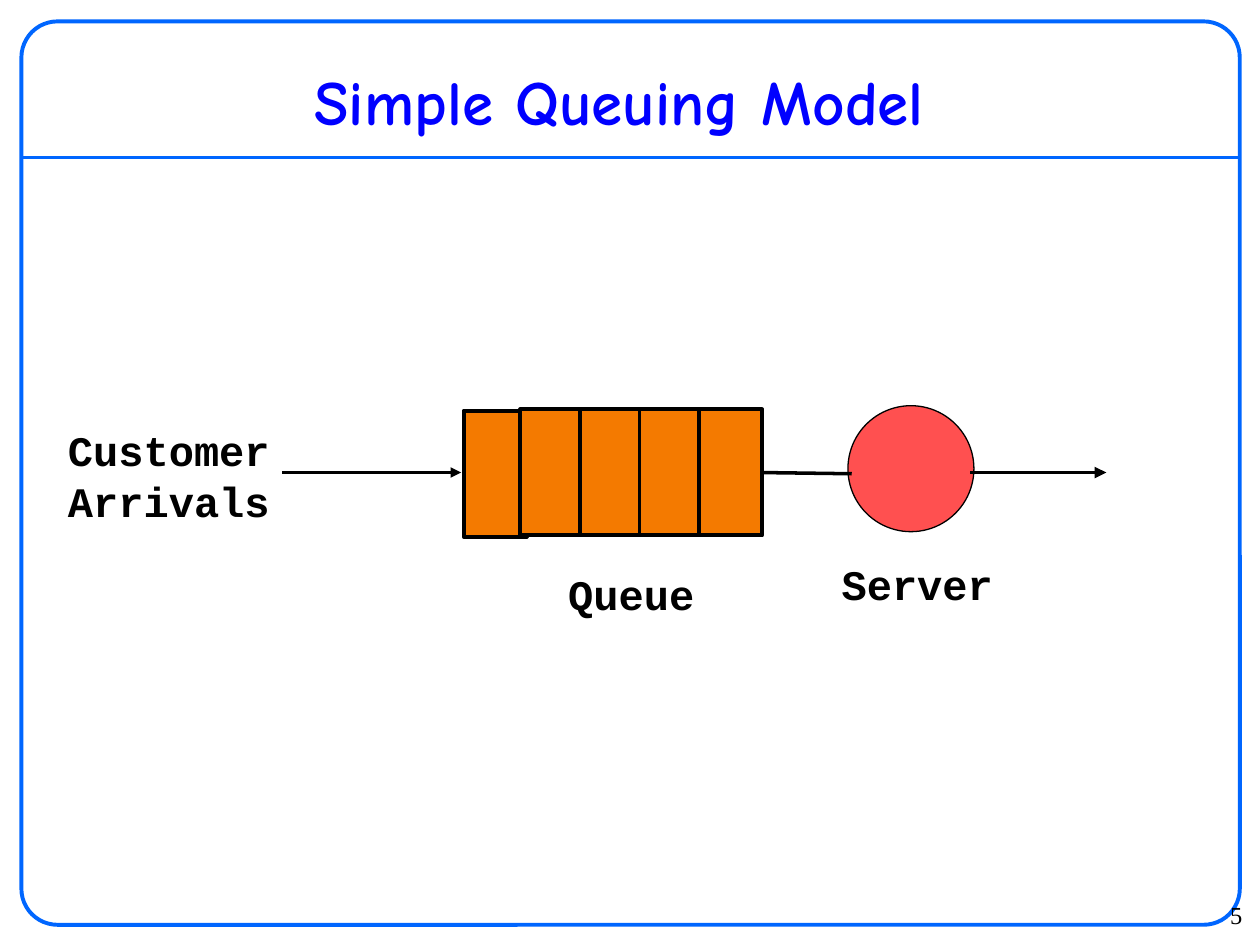
from dataclasses import dataclass
from typing import Optional

import pptx
import pptx.dml.color
import pptx.enum.shapes
import pptx.enum.text
import pptx.oxml
import pptx.oxml.ns
import pptx.util

Inches = pptx.util.Inches
Pt = pptx.util.Pt
RGBColor = pptx.dml.color.RGBColor
MSO_SHAPE = pptx.enum.shapes.MSO_SHAPE
PP_ALIGN = pptx.enum.text.PP_ALIGN
MSO_ANCHOR = pptx.enum.text.MSO_ANCHOR

BLACK = RGBColor(0x00, 0x00, 0x00)
WHITE = RGBColor(0xFF, 0xFF, 0xFF)
BLUE = RGBColor(0x00, 0x00, 0xFF)
FRAME_BLUE = RGBColor(0x00, 0x66, 0xFF)
RED = RGBColor(0xFF, 0x50, 0x50)
ORANGE = RGBColor(0xF4, 0x7A, 0x00)

LABEL_FONT = {"name": "Courier New", "size": Pt(24), "bold": True}
TITLE_FONT = {"name": "Comic Neue", "size": Pt(36), "bold": True}
NUMBER_FONT = {"name": "Times New Roman", "size": Pt(14)}


@dataclass
class Box:
    x: float
    y: float
    w: float
    h: float


@dataclass
class Outline:
    kind: int
    box: Box
    fill: Optional[RGBColor]
    color: RGBColor
    width: float


@dataclass
class Line:
    x1: float
    y1: float
    x2: float
    y2: float
    color: RGBColor
    width: float
    arrow: bool = False


@dataclass
class Label:
    lines: list[str]
    box: Box
    font: dict
    color: RGBColor = BLACK
    align: int = PP_ALIGN.CENTER
    anchor: int = MSO_ANCHOR.MIDDLE
    wrap: bool = False


def place(box: Box) -> list[int]:
    return [Inches(v) for v in (box.x, box.y, box.w, box.h)]


def draw_outline(slide, item: Outline):
    sp = slide.shapes.add_shape(item.kind, *place(item.box))
    sp.shadow.inherit = False
    if item.fill is None:
        sp.fill.background()
    else:
        sp.fill.solid()
        sp.fill.fore_color.rgb = item.fill
    sp.line.color.rgb = item.color
    sp.line.width = Pt(item.width)
    return sp


def draw_line(slide, item: Line) -> None:
    ends = [Inches(v) for v in (item.x1, item.y1, item.x2, item.y2)]
    sp = slide.shapes.add_connector(pptx.enum.shapes.MSO_CONNECTOR.STRAIGHT, *ends)
    sp.line.color.rgb = item.color
    sp.line.width = Pt(item.width)
    if item.arrow:
        tail = pptx.oxml.parse_xml(
            f'<a:tailEnd {pptx.oxml.ns.nsdecls("a")} type="triangle"/>'
        )
        sp.line._get_or_add_ln().append(tail)
    sp._element.spPr.append(
        pptx.oxml.parse_xml(f'<a:effectLst {pptx.oxml.ns.nsdecls("a")}/>')
    )


def write_text(tf, item: Label) -> None:
    tf.word_wrap = item.wrap
    tf.vertical_anchor = item.anchor
    for i, text in enumerate(item.lines):
        p = tf.add_paragraph() if i else tf.paragraphs[0]
        p.alignment = item.align
        r = p.add_run()
        r.text = text
        for name, value in item.font.items():
            setattr(r.font, name, value)
        r.font.color.rgb = item.color


FRAME = Outline(MSO_SHAPE.ROUNDED_RECTANGLE, Box(0.17, 0.17, 9.67, 7.17),
                None, FRAME_BLUE, 2.25)
SERVER = Outline(MSO_SHAPE.OVAL, Box(6.73, 3.22, 1, 1), RED, BLACK, 0.75)
FIRST_SLOT = Box(3.68, 3.26, 0.5, 1)
SLOTS = [FIRST_SLOT] + [Box(4.13 + 0.473 * i, 3.25, 0.5, 1) for i in range(4)]

RULE = Line(0.17, 1.25, 9.83, 1.25, FRAME_BLUE, 2.25)
FLOWS = [
    Line(2.24, 3.75, 3.66, 3.75, BLACK, 2, arrow=True),
    Line(7.7, 3.75, 8.78, 3.75, BLACK, 2.25, arrow=True),
    Line(6.02, 3.75, 6.76, 3.76, BLACK, 2),
]
ARRIVALS = Label(["Customer", "Arrivals"], Box(0.59, 3.28, 1.5, 0.98), LABEL_FONT)
LABELS = [
    Label(["Queue"], Box(4.26, 4.34, 1.5, 0.75), LABEL_FONT),
    Label(["Server"], Box(6.53, 4.26, 1.5, 0.75), LABEL_FONT),
    Label(["Simple Queuing Model"], Box(0.33, 0.42, 9.17, 0.75), TITLE_FONT,
          color=BLUE, wrap=True),
    Label(["5"], Box(8.96, 7.09, 1, 0.25), NUMBER_FONT,
          align=PP_ALIGN.RIGHT, anchor=MSO_ANCHOR.TOP, wrap=True),
]


def main() -> None:
    prs = pptx.Presentation()
    prs.slide_width, prs.slide_height = Inches(10), Inches(7.5)
    slide = prs.slides.add_slide(prs.slide_layouts[6])
    draw_line(slide, RULE)
    draw_outline(slide, FRAME).adjustments[0] = 0.04
    draw_outline(slide, SERVER)
    for flow in FLOWS:
        draw_line(slide, flow)
    border = Outline(MSO_SHAPE.RECTANGLE, ARRIVALS.box, None, WHITE, 0.75)
    write_text(draw_outline(slide, border).text_frame, ARRIVALS)
    for slot in SLOTS:
        draw_outline(slide, Outline(MSO_SHAPE.RECTANGLE, slot, ORANGE, BLACK, 2.25))
    for label in LABELS:
        write_text(slide.shapes.add_textbox(*place(label.box)).text_frame, label)
    prs.save("out.pptx")


if __name__ == "__main__":
    main()
